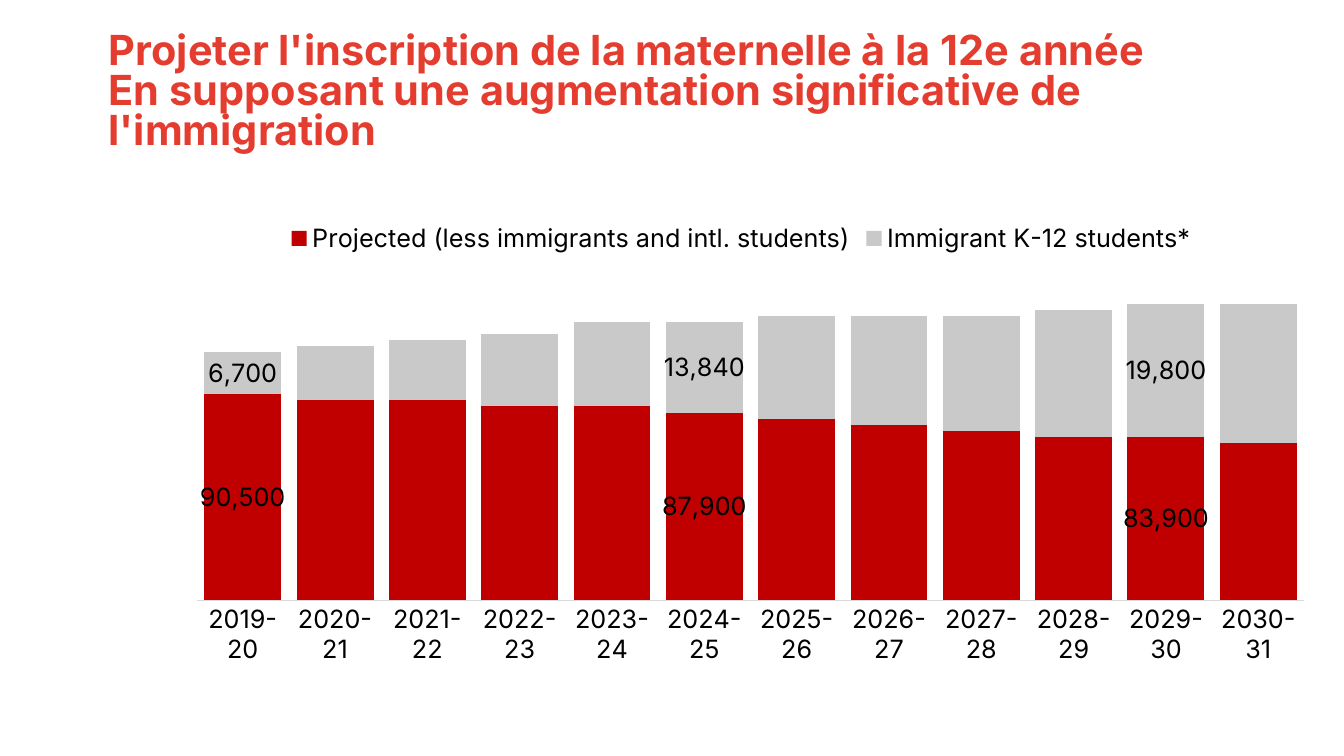
from lxml import etree
from pptx import Presentation
from pptx import util as u
from pptx.chart.data import CategoryChartData
from pptx.dml.color import RGBColor
from pptx.enum import chart as ch
from pptx.oxml.ns import qn

FONT = "Inter"
TITLE = [
    "Projeter l'inscription de la maternelle à la 12e année",
    "En supposant une augmentation significative de l'immigration",
]
YEARS = [f"{y}-{y - 1999}" for y in range(2019, 2031)]
LABELLED = (0, 5, 10)
SERIES = [
    ("Projected (less immigrants and intl. students)", "C00000",
     (100, 99, 99, 98, 98, 97, 96, 95, 94, 93, 93, 92),
     ("90,500", "87,900", "83,900")),
    ("Immigrant K-12 students*", "C9C9C9",
     (7, 9, 10, 12, 14, 15, 17, 18, 19, 21, 22, 23),
     ("6,700", "13,840", "19,800")),
]


def color(value):
    return RGBColor.from_string(value)


def set_font(font, size, value, bold=False):
    font.name = FONT
    font.size = u.Pt(size)
    font.bold = bold
    font.color.rgb = color(value)


def add_title(s, box):
    tf = s.shapes.add_textbox(*box).text_frame
    tf.word_wrap = True
    tf.text = "\n".join(TITLE)
    for p in tf.paragraphs:
        p.line_spacing = 0.8
        set_font(p.runs[0].font, 29.6, "E43D30", True)


def place_plot(chart, x, y, w, h):
    area = chart.plots[0]._element.getparent()
    for old in area.findall(qn("c:layout")):
        area.remove(old)
    layout = etree.Element(qn("c:layout"))
    manual = etree.SubElement(layout, qn("c:manualLayout"))
    for tag, val in (("layoutTarget", "inner"), ("xMode", "edge"),
                     ("yMode", "edge"), ("x", x), ("y", y), ("w", w), ("h", h)):
        etree.SubElement(manual, qn(f"c:{tag}")).set("val", str(val))
    area.insert(0, layout)


def add_enrolment_chart(s, box):
    data = CategoryChartData()
    data.categories = YEARS
    for name, _, values, _ in SERIES:
        data.add_series(name, values)
    chart = s.shapes.add_chart(
        ch.XL_CHART_TYPE.COLUMN_STACKED, *box, data).chart
    set_font(chart.font, 18, "000000")
    chart.has_title = False
    chart.has_legend = True
    chart.legend.position = ch.XL_LEGEND_POSITION.TOP
    chart.legend.include_in_layout = False
    set_font(chart.legend.font, 18, "000000")

    years = chart.category_axis
    years.major_tick_mark = ch.XL_TICK_MARK.NONE
    years.format.line.color.rgb = color("D9D9D9")
    years.format.line.width = u.Pt(0.75)
    set_font(years.tick_labels.font, 18, "000000")
    counts = chart.value_axis
    counts.minimum_scale = 66
    counts.maximum_scale = 122
    counts.has_major_gridlines = False
    counts.visible = False

    plot = chart.plots[0]
    plot.gap_width = 20
    plot.overlap = 100
    plot.vary_by_categories = False
    for series, (_, fill, _, labels) in zip(plot.series, SERIES):
        series.format.fill.solid()
        series.format.fill.fore_color.rgb = color(fill)
        for i, label in zip(LABELLED, labels):
            dl = series.points[i].data_label
            dl.text_frame.text = label
            set_font(dl.text_frame.paragraphs[0].runs[0].font, 18, "000000")
            dl.position = ch.XL_LABEL_POSITION.CENTER
        series.data_labels.show_value = False
    place_plot(chart, 0.04, 0.098, 0.936, 0.657)


def main():
    prs = Presentation()
    prs.slide_width, prs.slide_height = u.Inches(13.33), u.Inches(7.5)
    s = prs.slides.add_slide(prs.slide_layouts[6])
    add_title(s, [u.Inches(v) for v in (0.98, 0.29, 12.13, 1.3)])
    add_enrolment_chart(s, [u.Inches(v) for v in (1.48, 2.09, 11.74, 5.12)])
    prs.save("out.pptx")


if __name__ == "__main__":
    main()
